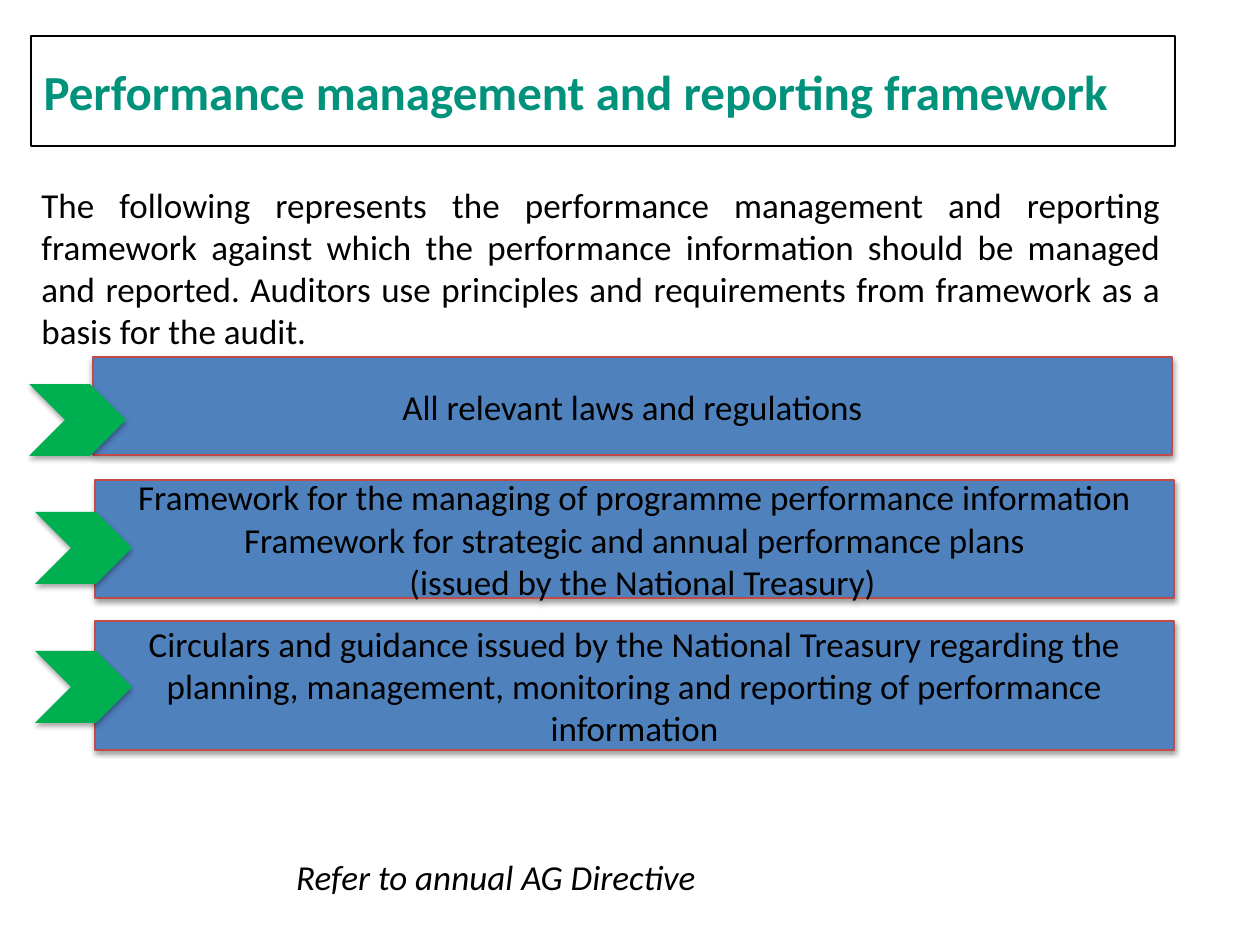
from dataclasses import dataclass

from lxml import etree
from pptx import Presentation
from pptx.dml.color import RGBColor
from pptx.enum.shapes import MSO_SHAPE
from pptx.enum.text import MSO_ANCHOR, MSO_AUTO_SIZE, PP_ALIGN
from pptx.oxml.ns import qn
from pptx.util import Emu, Inches, Pt

RECTANGLE, CHEVRON = MSO_SHAPE.RECTANGLE, MSO_SHAPE.CHEVRON
LEFT, CENTER, JUSTIFY = PP_ALIGN.LEFT, PP_ALIGN.CENTER, PP_ALIGN.JUSTIFY
MIDDLE, NO_FIT = MSO_ANCHOR.MIDDLE, MSO_AUTO_SIZE.NONE

BLACK = RGBColor(0x00, 0x00, 0x00)
TEAL = RGBColor(0x00, 0x92, 0x7B)
BLUE = RGBColor(0x4F, 0x81, 0xBD)
RED = RGBColor(0xBF, 0x4C, 0x48)
GREEN = RGBColor(0x00, 0xB0, 0x50)

FONT = "Calibri"
PX_PER_INCH = 126
BAR_WIDTH = 1079
CHEVRON_SIZE = (97, 72)


@dataclass(frozen=True)
class Source:
    """One framework source: a bar of text with a chevron on its left edge."""
    bar_left: int
    bar_top: int
    bar_height: int
    chevron_left: int
    chevron_top: int
    lines: tuple[str, ...]
    last_indent: int = 0


SOURCES = (
    Source(93, 357, 98, 29, 384, ("All relevant laws and regulations",)),
    Source(95, 480, 118, 35, 512, (
        "Framework for the managing of programme performance information",
        "Framework for strategic and annual performance plans",
        "(issued by the National Treasury)",
    ), last_indent=16),
    Source(95, 621, 129, 35, 651, (
        "Circulars and guidance issued by the National Treasury regarding the "
        "planning, management, monitoring and reporting of performance information",
    )),
)


def px(value: int) -> Emu:
    return Emu(round(value * Inches(1) / PX_PER_INCH))


def write(shape, *lines: str, size: int = 20, color: RGBColor = BLACK,
          align: PP_ALIGN = CENTER, bold: bool = False, italic: bool = False) -> None:
    frame = shape.text_frame
    frame.word_wrap = True
    frame.auto_size = NO_FIT
    frame.vertical_anchor = MIDDLE
    frame.text = "\n".join(lines)
    for para in frame.paragraphs:
        para.alignment = align
        font = para.font
        font.name, font.size, font.bold, font.italic = FONT, Pt(size), bold, italic
        font.color.rgb = color


def add_shadow(shape, distance: float, opacity: int) -> None:
    shape.shadow.inherit = False
    effects = shape._element.spPr.find(qn("a:effectLst"))
    shadow = etree.SubElement(effects, qn("a:outerShdw"), blurRad=str(Pt(3.15)),
                              dist=str(Pt(distance)), dir="5400000", rotWithShape="0")
    color = etree.SubElement(shadow, qn("a:srgbClr"), val=str(BLACK))
    etree.SubElement(color, qn("a:alpha"), val=str(opacity * 1000))


def add_source(page, source: Source) -> None:
    bar = page.shapes.add_shape(RECTANGLE, px(source.bar_left), px(source.bar_top),
                                px(BAR_WIDTH), px(source.bar_height))
    bar.fill.solid()
    bar.fill.fore_color.rgb = BLUE
    bar.line.color.rgb = RED
    bar.line.width = Pt(0.75)
    add_shadow(bar, 1.57, 38)
    write(bar, *source.lines)
    if source.last_indent:
        properties = bar.text_frame.paragraphs[-1]._p.get_or_add_pPr()
        properties.set("marL", str(px(source.last_indent)))

    chevron = page.shapes.add_shape(CHEVRON, px(source.chevron_left), px(source.chevron_top),
                                    *map(px, CHEVRON_SIZE))
    chevron.fill.solid()
    chevron.fill.fore_color.rgb = GREEN
    chevron.line.fill.background()
    add_shadow(chevron, 1.81, 35)


def main() -> None:
    deck = Presentation()
    deck.slide_width, deck.slide_height = Inches(10), Inches(7.5)
    page = deck.slides.add_slide(deck.slide_layouts[5])

    # Framed title
    title = page.shapes.title
    title.left, title.top, title.width, title.height = map(px, (31, 36, 1144, 110))
    title.line.color.rgb = BLACK
    title.line.width = Pt(0.75)
    write(title, "Performance management and reporting framework",
          size=28, color=TEAL, align=LEFT, bold=True)

    # Framework sources
    for source in SOURCES:
        add_source(page, source)

    # Introduction
    intro = page.shapes.add_textbox(*map(px, (29, 178, 1144, 179)))
    write(intro, "The following represents the performance management and reporting "
          "framework against which the performance information should be managed and "
          "reported. Auditors use principles and requirements from framework as a basis "
          "for the audit.", align=JUSTIFY)

    # Closing reference
    reference = page.shapes.add_textbox(*map(px, (88, 847, 816, 59)))
    write(reference, "Refer to annual AG Directive", italic=True)

    deck.save("out.pptx")


if __name__ == "__main__":
    main()
